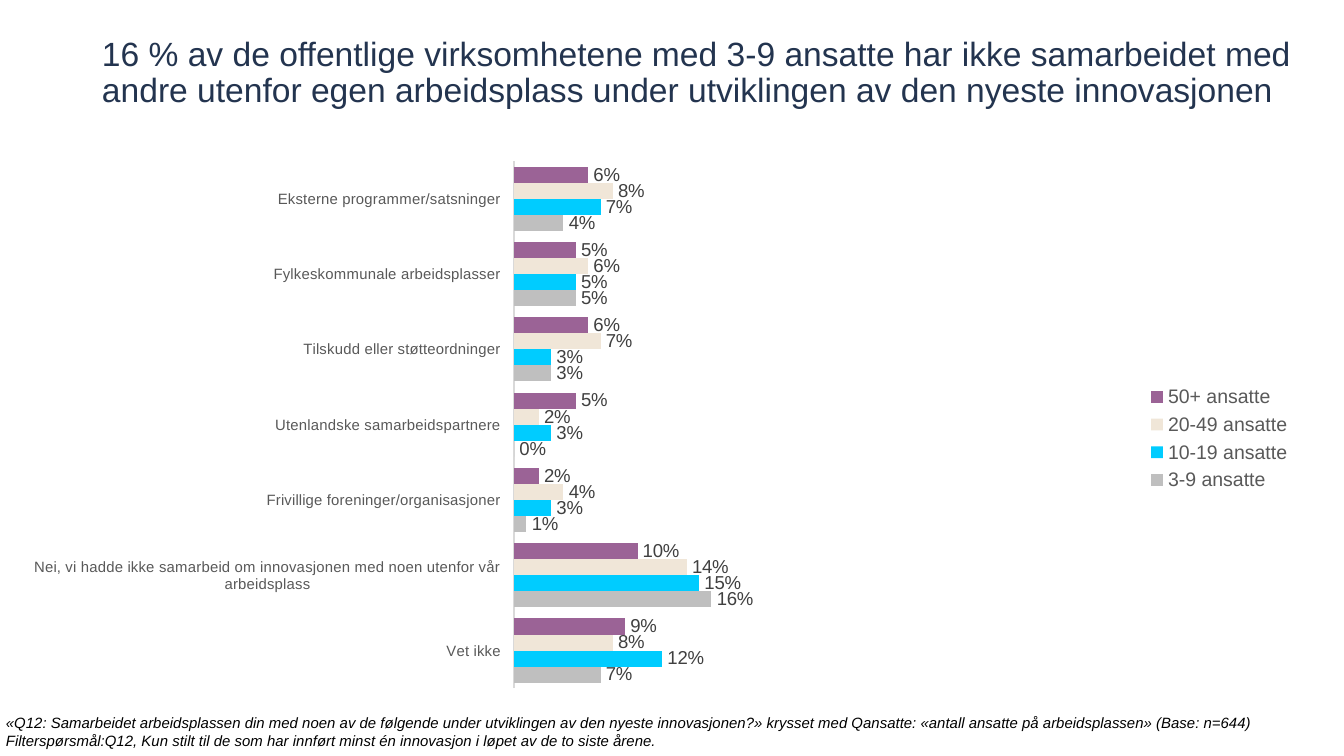
from dataclasses import dataclass

from pptx import Presentation
from pptx.chart.data import CategoryChartData as ChartData
from pptx.dml.color import RGBColor as Rgb
from pptx.enum.chart import XL_CHART_TYPE as Kind
from pptx.enum.chart import XL_LABEL_POSITION as Spot
from pptx.enum.chart import XL_LEGEND_POSITION as Side
from pptx.enum.chart import XL_TICK_LABEL_POSITION as Tag
from pptx.enum.chart import XL_TICK_MARK as Tick
from pptx.enum.text import MSO_ANCHOR as Anchor
from pptx.oxml import parse_xml
from pptx.oxml.ns import nsdecls
from pptx.util import Emu, Pt


@dataclass(frozen=True)
class Theme:
    face: str = "Arial"
    navy: str = "23344F"
    black: str = "000000"
    grey: str = "595959"
    dark: str = "404040"
    rule: str = "D9D9D9"
    title: float = 18
    note: float = 8
    axis: float = 8
    value: float = 10
    legend: float = 10.5


THEME = Theme()
SCALE = 914400 / 134.4

TITLE = (
    "16 % av de offentlige virksomhetene med 3-9 ansatte har ikke samarbeidet med "
    "andre utenfor egen arbeidsplass under utviklingen av den nyeste innovasjonen"
)
NOTE = (
    "«Q12: Samarbeidet arbeidsplassen din med noen av de følgende under utviklingen "
    "av den nyeste innovasjonen?» krysset med Qansatte: «antall ansatte på "
    "arbeidsplassen» (Base: n=644) Filterspørsmål:Q12, Kun stilt til de som har "
    "innført minst én innovasjon i løpet av de to siste årene."
)
GROUPS = [
    "Vet ikke",
    "Nei, vi hadde ikke samarbeid om innovasjonen med noen utenfor vår arbeidsplass",
    "Frivillige foreninger/organisasjoner",
    "Utenlandske samarbeidspartnere",
    "Tilskudd eller støtteordninger",
    "Fylkeskommunale arbeidsplasser",
    "Eksterne programmer/satsninger",
]
SERIES = [
    ("3-9 ansatte", "BFBFBF", [0.07, 0.16, 0.01, 0, 0.03, 0.05, 0.04]),
    ("10-19 ansatte", "00CCFF", [0.12, 0.15, 0.03, 0.03, 0.03, 0.05, 0.07]),
    ("20-49 ansatte", "F0E6D8", [0.08, 0.14, 0.04, 0.02, 0.07, 0.06, 0.08]),
    ("50+ ansatte", "9B6396", [0.09, 0.1, 0.02, 0.05, 0.06, 0.05, 0.06]),
]


def px(*sizes):
    return [Emu(round(size * SCALE)) for size in sizes]


def style(font, size, color, italic=False):
    font.name = THEME.face
    font.size = Pt(size)
    font.italic = italic
    font.color.rgb = Rgb.from_string(color)


def add_text(slide, text, box, size, color, italic=False, anchor=Anchor.TOP, pitch=None):
    frame = slide.shapes.add_textbox(*px(*box)).text_frame
    frame.word_wrap = True
    frame.vertical_anchor = anchor
    frame.margin_left = frame.margin_right = 0
    frame.margin_top = frame.margin_bottom = 0
    line = frame.paragraphs[0]
    line.line_spacing = pitch
    run = line.add_run()
    run.text = text
    style(run.font, size, color, italic)


def place_plot(chart, **parts):
    """Fix the inner plot area at fractions of the chart frame."""
    rows = "".join(f'<c:{key} val="{val}"/>' for key, val in parts.items())
    area = chart._chartSpace.chart.plotArea
    for old in area.findall("{*}layout"):
        area.remove(old)
    area.insert(0, parse_xml(
        f'<c:layout {nsdecls("c")}><c:manualLayout><c:layoutTarget val="inner"/>'
        f'<c:xMode val="edge"/><c:yMode val="edge"/>{rows}'
        "</c:manualLayout></c:layout>"
    ))


def style_axes(chart):
    axis = chart.category_axis
    axis.major_tick_mark = axis.minor_tick_mark = Tick.NONE
    axis.tick_label_position = Tag.LOW
    axis.format.line.color.rgb = Rgb.from_string(THEME.rule)
    axis.format.line.width = Pt(0.75)
    style(axis.tick_labels.font, THEME.axis, THEME.grey)
    scale = chart.value_axis
    scale.minimum_scale, scale.maximum_scale = 0, 0.6
    scale.has_major_gridlines = False
    scale.visible = False


def style_bars(plot):
    plot.gap_width = 70
    plot.overlap = 0
    plot.vary_by_categories = False
    for bars, (_, color, _) in zip(plot.series, SERIES):
        bars.format.fill.solid()
        bars.format.fill.fore_color.rgb = Rgb.from_string(color)
        labels = bars.data_labels
        labels.show_value = True
        labels.position = Spot.OUTSIDE_END
        labels.number_format = "0%"
        labels.number_format_is_linked = False
        style(labels.font, THEME.value, THEME.dark)


def add_bars(slide, box):
    data = ChartData(number_format="0%")
    data.categories = GROUPS
    for name, _, vals in SERIES:
        data.add_series(name, vals)
    chart = slide.shapes.add_chart(Kind.BAR_CLUSTERED, *px(*box), data).chart
    chart.has_title = False
    style(chart.font, THEME.value, THEME.black)
    style_axes(chart)
    style_bars(chart.plots[0])
    chart.has_legend = True
    chart.legend.position = Side.RIGHT
    chart.legend.include_in_layout = False
    style(chart.legend.font, THEME.legend, THEME.grey)
    place_plot(chart, x=0.375, y=0.034, w=0.585, h=0.886)


def main():
    deck = Presentation()
    deck.slide_width, deck.slide_height = px(1344, 756)
    slide = deck.slides.add_slide(deck.slide_layouts[6])
    add_text(slide, TITLE, (102, 66, 1230, 44), THEME.title, THEME.navy,
             anchor=Anchor.BOTTOM, pitch=0.9)
    add_bars(slide, (34, 141, 1271, 595))
    add_text(slide, NOTE, (6, 714, 1328, 36), THEME.note, THEME.black, italic=True)
    deck.save("out.pptx")


if __name__ == "__main__":
    main()
